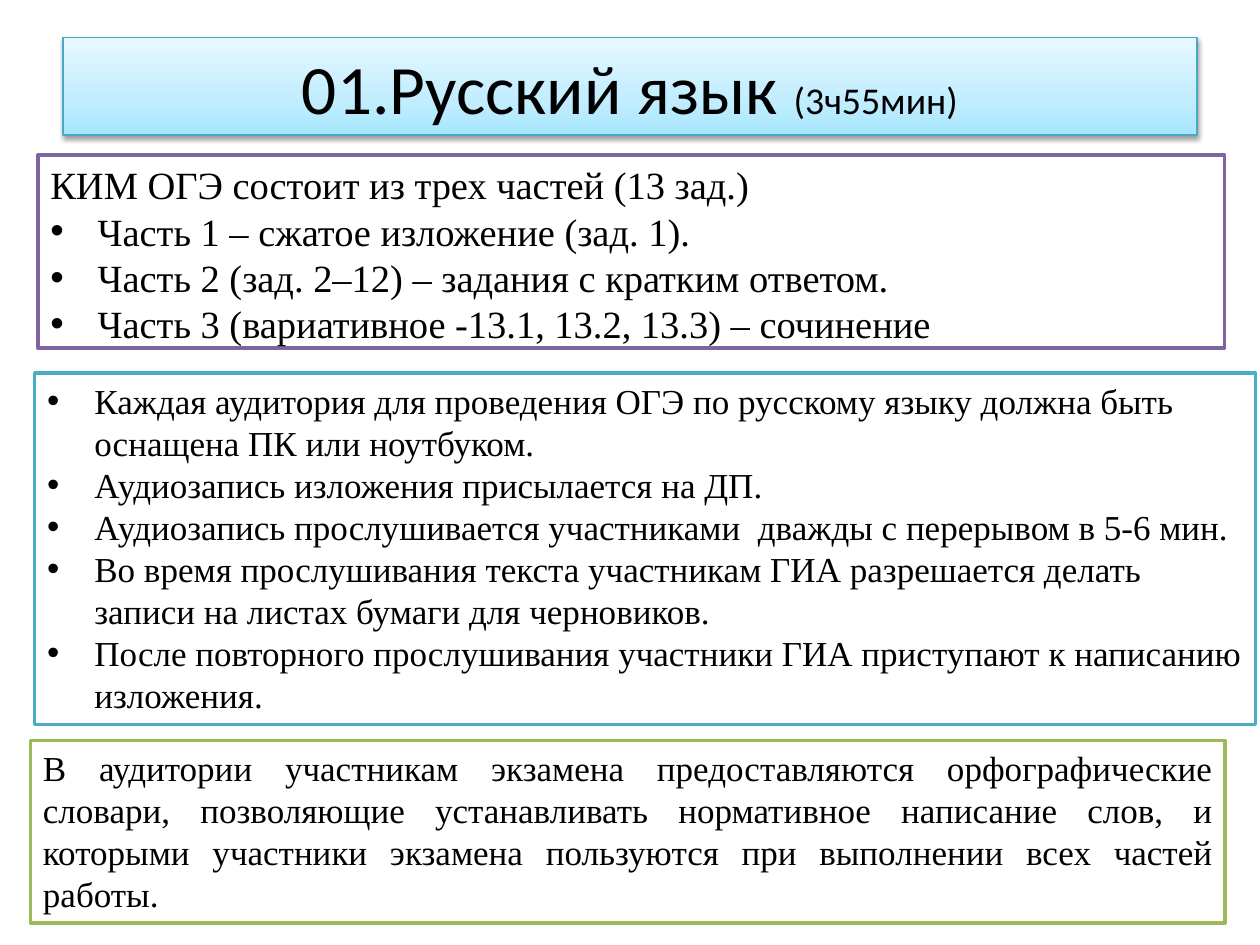
from copy import deepcopy
from lxml.etree import SubElement
from pptx import Presentation
from pptx.dml.color import RGBColor
from pptx.enum.text import MSO_ANCHOR, MSO_AUTO_SIZE, PP_ALIGN
from pptx.oxml.ns import qn
from pptx.util import Pt


def rgb(value):
    return RGBColor.from_string(value)


def fill_panel(sp, box, line, size, paragraphs):
    """Place and outline a panel; paragraphs are (text, bulleted, alignment)."""
    sp.left, sp.top, sp.width, sp.height = map(Pt, box)
    sp.fill.solid()
    sp.fill.fore_color.rgb = rgb("FFFFFF")
    sp.line.color.rgb = rgb(line)
    sp.line.width = Pt(2)
    tf = sp.text_frame
    tf.word_wrap = True
    tf.vertical_anchor = MSO_ANCHOR.TOP
    for i, (text, bulleted, align) in enumerate(paragraphs):
        p = tf.add_paragraph() if i else tf.paragraphs[0]
        p.alignment = align
        p.space_before = Pt(0)
        pPr = p._p.get_or_add_pPr()
        indent = Pt(27) if bulleted else 0
        pPr.set("marL", str(indent))
        pPr.set("indent", str(-indent))
        if bulleted:
            SubElement(pPr, qn("a:buFont"), typeface="Arial")
            SubElement(pPr, qn("a:buChar"), char="•")
        else:
            SubElement(pPr, qn("a:buNone"))
        r = p.add_run()
        r.text = text
        r.font.name = "Times New Roman"
        r.font.size = Pt(size)
        r.font.color.rgb = rgb("000000")


prs = Presentation()
prs.slide_width, prs.slide_height = Pt(720), Pt(540)
s = prs.slides.add_slide(prs.slide_layouts[1])
LEFT, JUSTIFY = PP_ALIGN.LEFT, PP_ALIGN.JUSTIFY

# Title bar: gradient, outline, shadow
title = s.shapes.title
title.left, title.top, title.width, title.height = map(Pt, (36, 21.6, 648, 55.6))
title.fill.gradient()
title.fill.gradient_angle = 90
stop_list = title._element.spPr.find(".//" + qn("a:gsLst"))
stop_list.insert(1, deepcopy(stop_list[0]))
stops = ((0, "A7E6FF"), (0.35, "C1EDFF"), (1, "E7F8FF"))
for stop, (position, color) in zip(title.fill.gradient_stops, stops):
    stop.position = position
    stop.color.rgb = rgb(color)
title.line.color.rgb = rgb("46AAC5")
title.line.width = Pt(0.75)
title.shadow.inherit = False
effects = title._element.spPr.find(qn("a:effectLst"))
shadow = SubElement(effects, qn("a:outerShdw"), blurRad=str(Pt(3.1)),
                    dist=str(Pt(1.6)), dir="5400000", rotWithShape="0")
shadow_color = SubElement(shadow, qn("a:srgbClr"), val="000000")
SubElement(shadow_color, qn("a:alpha"), val="38000")

# Title text
tf = title.text_frame
tf.auto_size = MSO_AUTO_SIZE.NONE
tf.vertical_anchor = MSO_ANCHOR.MIDDLE
p = tf.paragraphs[0]
p.alignment = PP_ALIGN.CENTER
for text, size in (("01.Русский язык ", 39.6), ("(3ч55мин)", 21.6)):
    r = p.add_run()
    r.text = text
    r.font.name = "Calibri"
    r.font.size = Pt(size)
    r.font.color.rgb = rgb("000000")

# Exam structure
body = s.placeholders[1]
fill_panel(body, (21.6, 88.6, 678.2, 110.2), "8064A2", 22, [
    ("КИМ ОГЭ состоит из трех частей (13 зад.)", False, LEFT),
    ("Часть 1 – сжатое изложение (зад. 1).", True, LEFT),
    ("Часть 2 (зад. 2–12) – задания с кратким ответом.", True, LEFT),
    ("Часть 3 (вариативное -13.1, 13.2, 13.3) – сочинение", True, LEFT),
])
body.text_frame.auto_size = MSO_AUTO_SIZE.NONE

# Listening rules and dictionaries
panels = (
    ((19.8, 213.1, 697.7, 201), "4BACC6", [
        ("Каждая аудитория для проведения ОГЭ по русскому языку должна быть "
         "оснащена ПК или ноутбуком.", True, LEFT),
        ("Аудиозапись изложения присылается на ДП.", True, JUSTIFY),
        ("Аудиозапись прослушивается участниками  дважды с перерывом в 5-6 мин.",
         True, LEFT),
        ("Во время прослушивания текста участникам ГИА разрешается делать "
         "записи на листах бумаги для черновиков.", True, LEFT),
        ("После повторного прослушивания участники ГИА приступают к написанию "
         "изложения.", True, LEFT),
    ]),
    ((17.5, 423.2, 682.7, 104.2), "9BBB59", [
        ("В аудитории участникам экзамена предоставляются орфографические "
         "словари, позволяющие устанавливать нормативное написание слов, и "
         "которыми участники экзамена пользуются при выполнении всех частей "
         "работы.", False, JUSTIFY),
    ]),
)
for box, line, paragraphs in panels:
    sp = s.shapes.add_textbox(*map(Pt, box))
    fill_panel(sp, box, line, 20, paragraphs)
    sp.text_frame.auto_size = MSO_AUTO_SIZE.SHAPE_TO_FIT_TEXT

prs.save("out.pptx")
